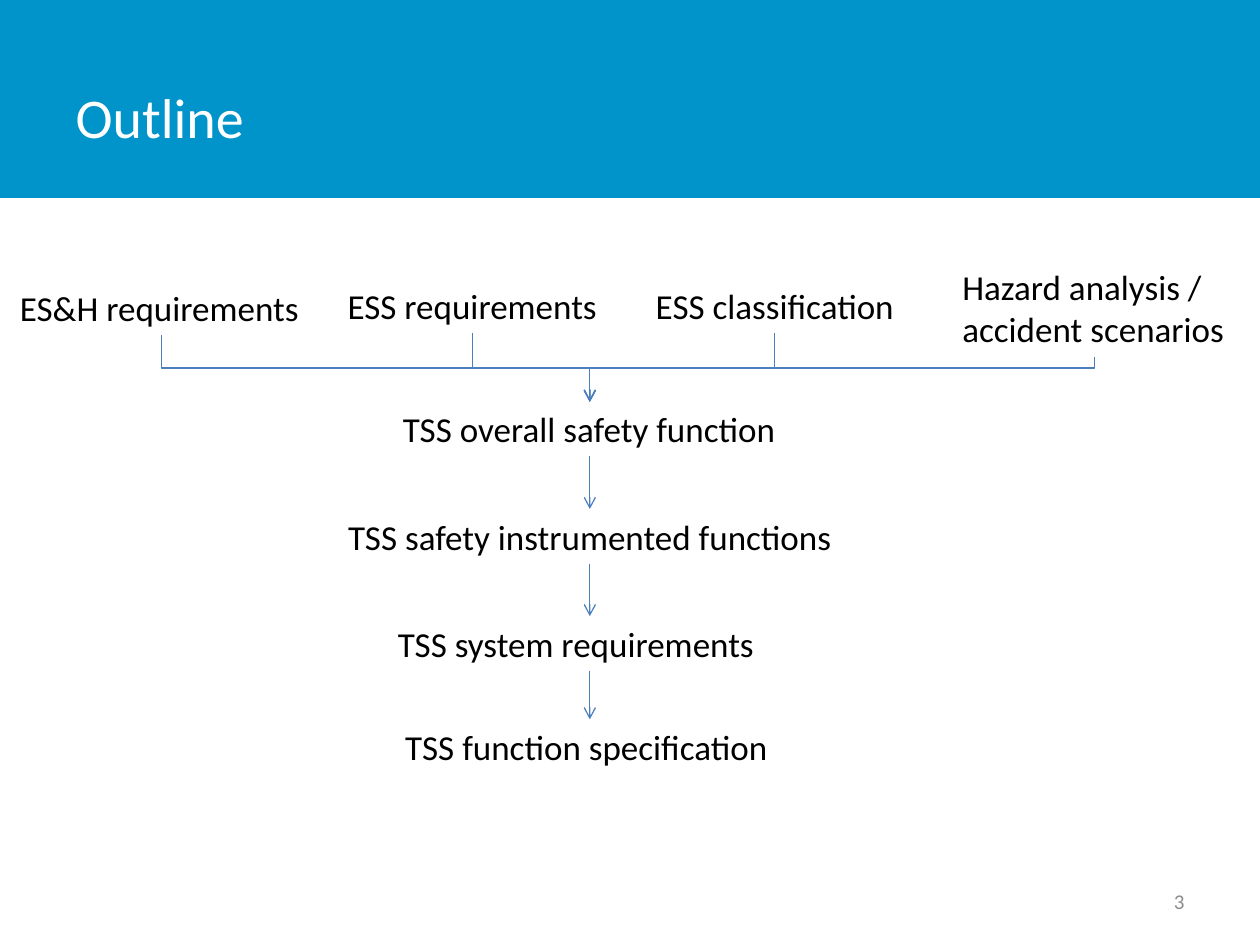
from dataclasses import dataclass

from lxml import etree
from pptx import Presentation
from pptx.dml.color import RGBColor
from pptx.enum.shapes import MSO_CONNECTOR, MSO_SHAPE
from pptx.enum.text import MSO_ANCHOR, MSO_AUTO_SIZE, PP_ALIGN
from pptx.oxml.ns import qn
from pptx.util import Cm, Pt

LEFT, CENTER, RIGHT = PP_ALIGN.LEFT, PP_ALIGN.CENTER, PP_ALIGN.RIGHT
MIDDLE, TOP = MSO_ANCHOR.MIDDLE, MSO_ANCHOR.TOP
STRAIGHT, ELBOW = MSO_CONNECTOR.STRAIGHT, MSO_CONNECTOR.ELBOW
RECTANGLE = MSO_SHAPE.RECTANGLE
FIT_SHAPE = MSO_AUTO_SIZE.SHAPE_TO_FIT_TEXT
TITLE_ONLY = 5

# Label geometry in cm
LABEL_HEIGHT = 1.1
AXIS_X = 11.89
BUS_Y = 7.42

# text lines, left, top, width, height, alignment, wrap
INPUTS = [
    (["ES&H requirements"], 0.15, 5.66, 6.2, LABEL_HEIGHT, LEFT, False),
    (["ESS requirements"], 5.94, 5.61, 7.16, LABEL_HEIGHT, CENTER, True),
    (["ESS classification"], 12.04, 5.61, 7.16, LABEL_HEIGHT, CENTER, True),
    (["Hazard analysis / ", "accident scenarios"], 19.15, 5.23, 5.84, 1.96, LEFT, False),
]
STEPS = [
    (["TSS overall safety function"], 7.19, 8.1, 9.37, LABEL_HEIGHT, CENTER, True),
    (["TSS safety instrumented functions"], 6.71, 10.26, 10.36, LABEL_HEIGHT, CENTER, False),
    (["TSS system requirements"], 7.77, 12.42, 8.23, LABEL_HEIGHT, LEFT, True),
    (["TSS function specification"], 7.92, 14.5, 7.9, LABEL_HEIGHT, LEFT, False),
]


@dataclass(frozen=True)
class Theme:
    font: str = "Calibri"
    banner: RGBColor = RGBColor(0x00, 0x94, 0xCA)
    title: RGBColor = RGBColor(0xFF, 0xFF, 0xFF)
    text: RGBColor = RGBColor(0x00, 0x00, 0x00)
    muted: RGBColor = RGBColor(0x8C, 0x8C, 0x8C)
    arrow: RGBColor = RGBColor(0x4B, 0x7E, 0xBC)
    title_size: int = 32
    label_size: int = 20
    number_size: int = 12
    arrow_width: float = 0.75


class SlideBuilder:
    def __init__(self, slide, theme):
        self.slide = slide
        self.theme = theme

    def add_lines(self, paragraph, lines, size, color, align):
        paragraph.alignment = align
        for index, line in enumerate(lines):
            if index:
                paragraph.add_line_break()
            run = paragraph.add_run()
            run.text = line
            run.font.name = self.theme.font
            run.font.size = Pt(size)
            run.font.color.rgb = color

    def banner(self, width, height):
        band = self.slide.shapes.add_shape(RECTANGLE, 0, 0, Cm(width), Cm(height))
        band.shadow.inherit = False
        band.fill.solid()
        band.fill.fore_color.rgb = self.theme.banner
        band.line.fill.background()
        # Send behind the title placeholder
        self.slide.shapes.title.element.addprevious(band.element)

    def title(self, text, left, top, width, height):
        title = self.slide.shapes.title
        title.left, title.top = Cm(left), Cm(top)
        title.width, title.height = Cm(width), Cm(height)
        title.text_frame.vertical_anchor = MIDDLE
        self.add_lines(title.text_frame.paragraphs[0], [text],
                       self.theme.title_size, self.theme.title, LEFT)

    def text_box(self, left, top, width, height, wrap, anchor):
        box = self.slide.shapes.add_textbox(Cm(left), Cm(top), Cm(width), Cm(height))
        frame = box.text_frame
        frame.word_wrap = wrap
        frame.vertical_anchor = anchor
        return frame

    def label(self, lines, left, top, width, height, align, wrap):
        frame = self.text_box(left, top, width, height, wrap, TOP)
        frame.auto_size = FIT_SHAPE
        self.add_lines(frame.paragraphs[0], lines,
                       self.theme.label_size, self.theme.text, align)

    def page_number(self, number, left, top, width, height):
        frame = self.text_box(left, top, width, height, True, MIDDLE)
        self.add_lines(frame.paragraphs[0], [number],
                       self.theme.number_size, self.theme.muted, RIGHT)

    def arrow(self, kind, x1, y1, x2, y2):
        connector = self.slide.shapes.add_connector(kind, Cm(x1), Cm(y1), Cm(x2), Cm(y2))
        connector.line.color.rgb = self.theme.arrow
        connector.line.width = Pt(self.theme.arrow_width)
        properties = connector.element.spPr
        etree.SubElement(properties.find(qn("a:ln")), qn("a:tailEnd"), type="arrow")
        etree.SubElement(properties, qn("a:effectLst"))
        return properties

    def elbow_down(self, x1, y1, x2, y2, bend_y):
        """Down, across at bend_y, then down: a quarter-turned elbow."""
        span, drop = abs(x2 - x1), y2 - y1
        left = (x1 + x2 - drop) / 2
        top = (y1 + y2 - span) / 2
        properties = self.arrow(ELBOW, left, top, left + drop, top + span)
        frame = properties.find(qn("a:xfrm"))
        if x1 < x2:
            frame.set("rot", "16200000")
            frame.set("flipH", "1")
        else:
            frame.set("rot", "5400000")
        geometry = properties.find(qn("a:prstGeom"))
        guides = geometry.find(qn("a:avLst"))
        if guides is None:
            guides = etree.SubElement(geometry, qn("a:avLst"))
        bend = round((bend_y - y1) / drop * 100000)
        etree.SubElement(guides, qn("a:gd"), name="adj1", fmla=f"val {bend}")


def main():
    deck = Presentation()
    deck.slide_width, deck.slide_height = Cm(25.4), Cm(19.05)
    slide = deck.slides.add_slide(deck.slide_layouts[TITLE_ONLY])
    builder = SlideBuilder(slide, Theme())

    # Header and page number
    builder.banner(25.4, 3.99)
    builder.title("Outline", 1.27, 0.76, 19.84, 3.18)
    builder.page_number("3", 18.21, 17.65, 5.92, 1.02)

    # Labels
    for label in INPUTS + STEPS:
        builder.label(*label)

    # Inputs join into the first step
    first_step_top = STEPS[0][2]
    for _, left, top, width, height, *_ in INPUTS:
        builder.elbow_down(left + width / 2, top + height, AXIS_X, first_step_top, BUS_Y)

    # Each step leads to the next
    for step, following in zip(STEPS, STEPS[1:]):
        builder.arrow(STRAIGHT, AXIS_X, step[2] + LABEL_HEIGHT, AXIS_X, following[2])

    deck.save("out.pptx")


if __name__ == "__main__":
    main()
